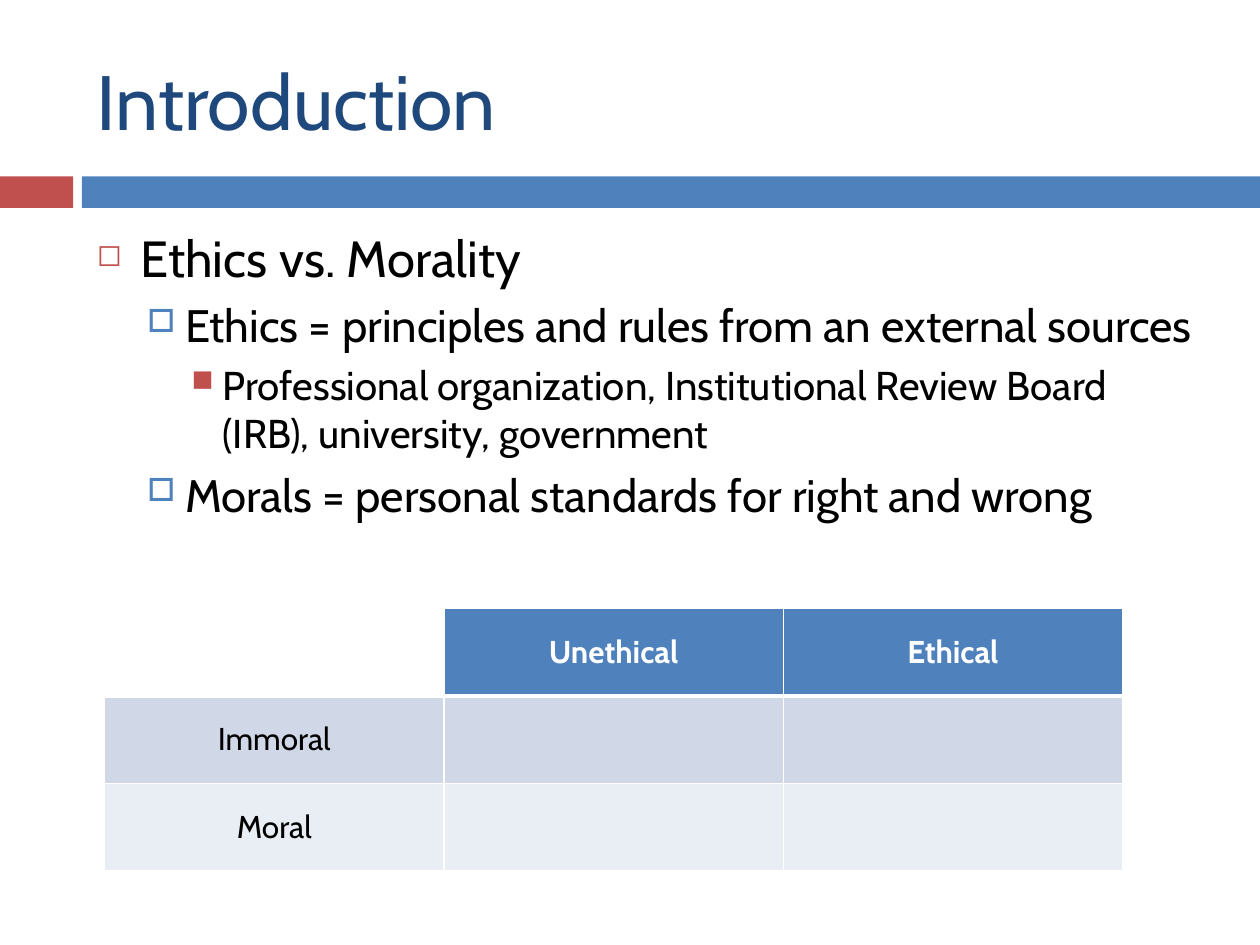
from lxml.etree import SubElement
from pptx import Presentation
from pptx.dml.color import RGBColor
from pptx.enum.shapes import MSO_SHAPE
from pptx.enum.text import MSO_ANCHOR, PP_ALIGN
from pptx.oxml.ns import qn
from pptx.util import Inches, Pt

FONT = "Cabin"
RED = RGBColor(0xC0, 0x50, 0x4D)
BLUE = RGBColor(0x4F, 0x81, 0xBD)
NAVY = RGBColor(0x1F, 0x49, 0x7D)
BLACK = RGBColor(0, 0, 0)
WHITE = RGBColor(0xFF, 0xFF, 0xFF)
BAND_DARK = RGBColor(0xD0, 0xD8, 0xE8)
BAND_LIGHT = RGBColor(0xE9, 0xED, 0xF4)

# Content
TITLE = "Introduction"
BARS = [(0, 0.58, RED), (0.65, 9.35, BLUE)]  # left, width, colour
OUTLINE = [  # level, text
    (0, "Ethics vs. Morality"),
    (1, "Ethics = principles and rules from an external sources"),
    (2, "Professional organization, Institutional Review Board (IRB), university, government"),
    (1, "Morals = personal standards for right and wrong"),
]
LEVELS = [
    dict(size=29, before=7, left=0.35, hang=0.35, char="◻", color=RED, percent=60),
    dict(size=26, before=5.5, left=0.7, hang=0.3, char="□", color=BLUE, percent=70),
    dict(size=23, before=5, left=1, hang=0.25, char="■", color=RED, percent=75),
]
TABLE = [
    ["", "Unethical", "Ethical"],
    ["Immoral", "", ""],
    ["Moral", "", ""],
]
ROW_FILLS = [BLUE, BAND_DARK, BAND_LIGHT]


def write(p, text, size=18, color=BLACK, bold=False, align=PP_ALIGN.LEFT):
    p.alignment = align
    r = p.add_run()
    r.text = text
    r.font.name, r.font.size, r.font.bold = FONT, Pt(size), bold
    r.font.color.rgb = color


def add_text_frame(s, left, top, width, height, anchor):
    box = s.shapes.add_textbox(Inches(left), Inches(top), Inches(width), Inches(height))
    tf = box.text_frame
    tf.word_wrap = True
    tf.vertical_anchor = anchor
    return tf


def set_bullet(p, level):
    pPr = p._p.get_or_add_pPr()
    pPr.set("marL", str(Inches(level["left"])))
    pPr.set("indent", str(-Inches(level["hang"])))
    SubElement(SubElement(pPr, qn("a:buClr")), qn("a:srgbClr"), val=str(level["color"]))
    SubElement(pPr, qn("a:buSzPct"), val=str(level["percent"] * 1000))
    SubElement(pPr, qn("a:buChar"), char=level["char"])


def set_borders(cell, **widths):
    tcPr = cell._tc.get_or_add_tcPr()
    for side in "LRTB":
        ln = SubElement(tcPr, qn(f"a:ln{side}"), w=str(Pt(widths.get(side, 1))))
        SubElement(SubElement(ln, qn("a:solidFill")), qn("a:srgbClr"), val=str(WHITE))


prs = Presentation()
prs.slide_width, prs.slide_height = Inches(10), Inches(7.5)
s = prs.slides.add_slide(prs.slide_layouts[6])

# Divider bars
for left, width, color in BARS:
    sp = s.shapes.add_shape(MSO_SHAPE.RECTANGLE, Inches(left), Inches(1.4),
                            Inches(width), Inches(0.25))
    sp.shadow.inherit = False
    sp.fill.solid()
    sp.fill.fore_color.rgb = color
    sp.line.fill.background()

# Title
tf = add_text_frame(s, 0.67, 0.25, 8.92, 1.08, MSO_ANCHOR.MIDDLE)
write(tf.paragraphs[0], TITLE, size=44, color=NAVY)

# Bulleted outline
tf = add_text_frame(s, 0.67, 1.75, 8.92, 2.67, MSO_ANCHOR.TOP)
for i, (depth, text) in enumerate(OUTLINE):
    p = tf.add_paragraph() if i else tf.paragraphs[0]
    level = LEVELS[depth]
    p.level = depth
    p.space_before = Pt(level["before"])
    set_bullet(p, level)
    write(p, text, size=level["size"])

# Ethics and morality grid
table = s.shapes.add_table(len(TABLE), len(TABLE[0]), Inches(0.83), Inches(4.83),
                           Inches(8.08), Inches(2.08)).table
for i, row in enumerate(TABLE):
    header = i == 0
    for j, text in enumerate(row):
        cell = table.cell(i, j)
        set_borders(cell, T=3 if i == 1 else 1, B=3 if header else 1)
        cell.fill.solid()
        cell.fill.fore_color.rgb = WHITE if header and j == 0 else ROW_FILLS[i]
        cell.vertical_anchor = MSO_ANCHOR.MIDDLE
        if text:
            write(cell.text_frame.paragraphs[0], text, bold=header,
                  color=WHITE if header else BLACK, align=PP_ALIGN.CENTER)

prs.save("out.pptx")
